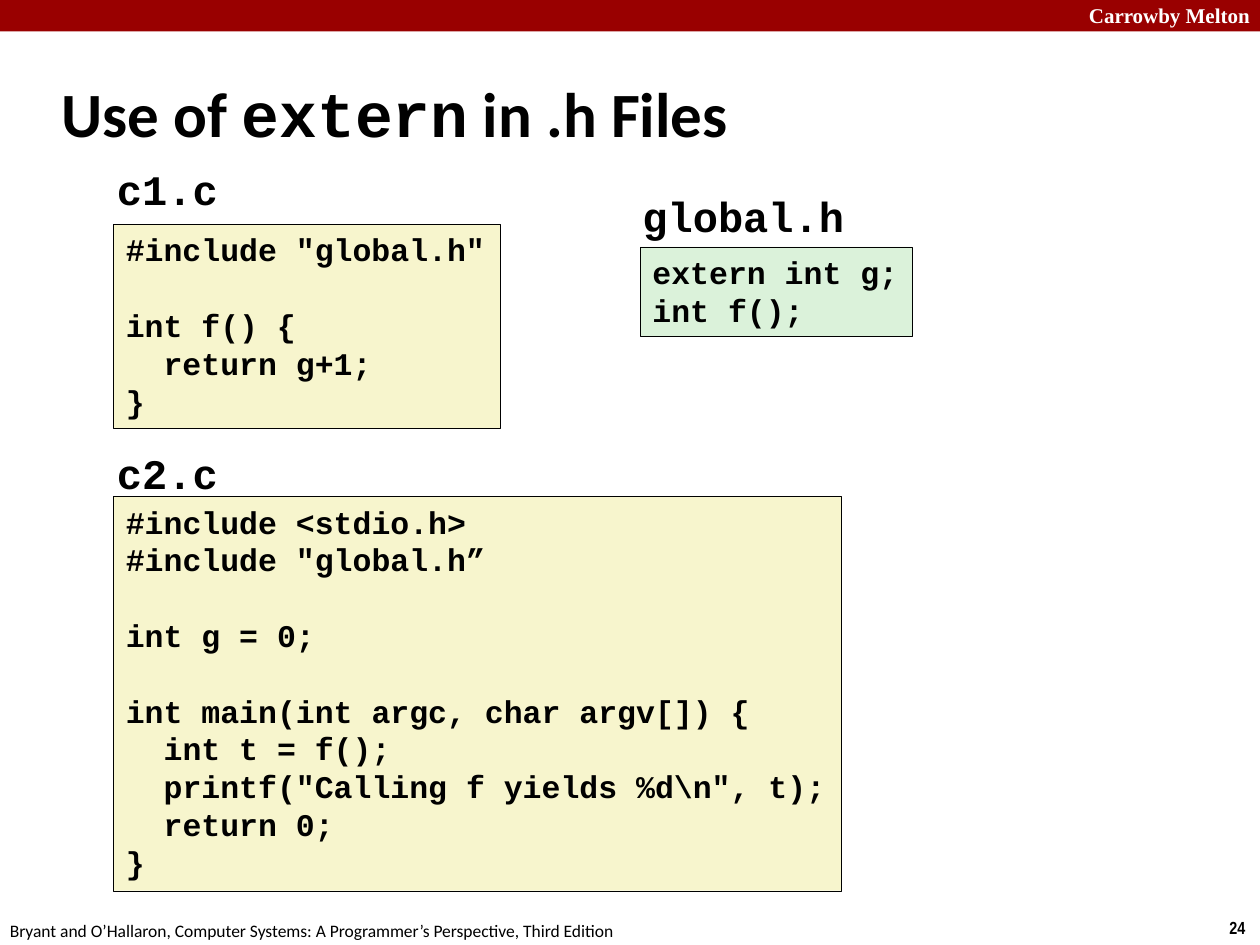
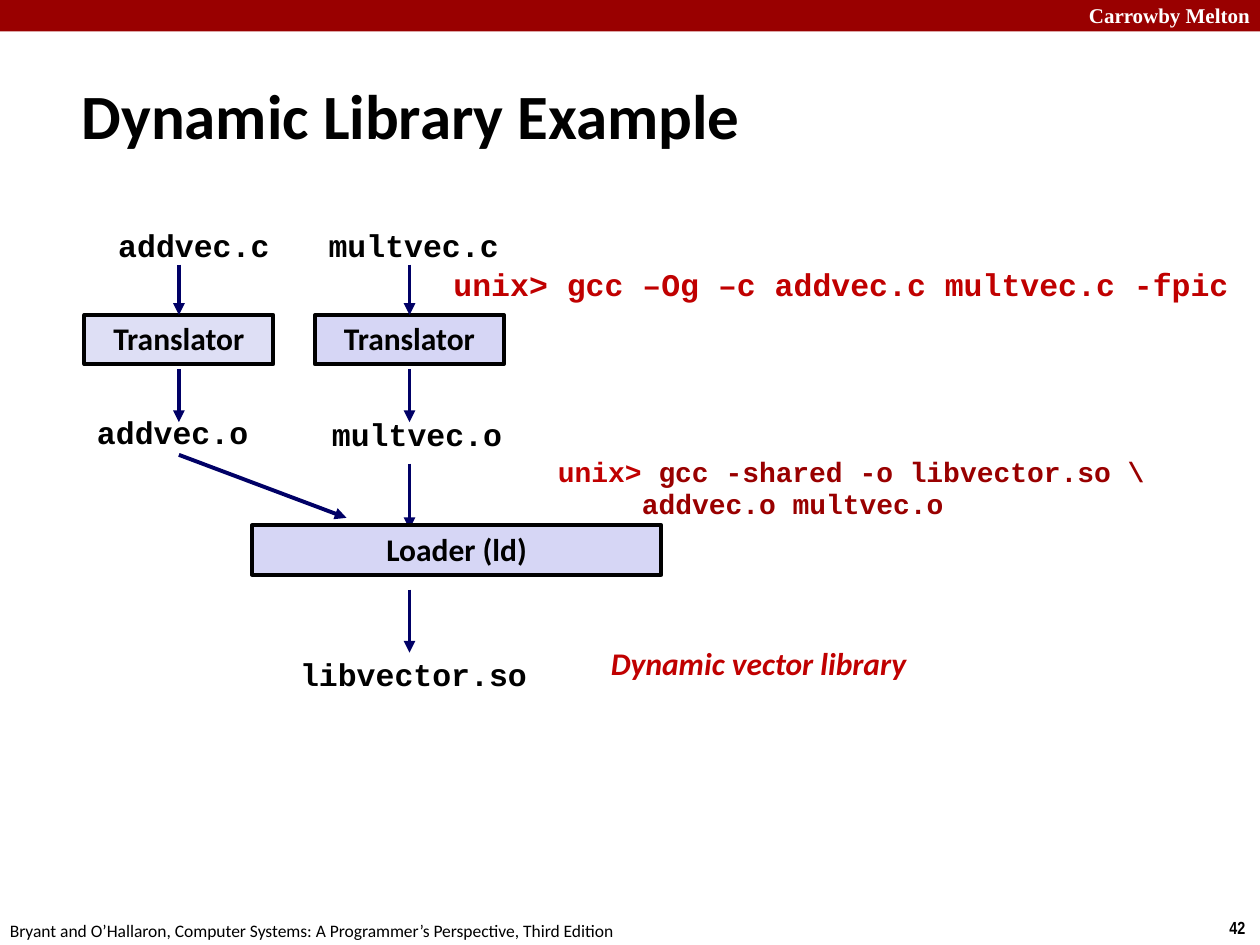
from dataclasses import dataclass
from typing import Optional

from lxml.etree import SubElement
from pptx import Presentation
from pptx.dml.color import RGBColor
from pptx.enum.shapes import MSO_CONNECTOR, MSO_SHAPE
from pptx.enum.text import MSO_ANCHOR, PP_ALIGN
from pptx.oxml.ns import qn
from pptx.shapes.autoshape import Shape
from pptx.shapes.connector import Connector
from pptx.slide import Slide
from pptx.util import Inches, Pt

BLACK, WHITE = "000000", "FFFFFF"
BAND_RED, COMMAND_RED, ARROW_BLUE = "990000", "C00000", "000066"
SOURCE_YELLOW, HEADER_GREEN = "F7F5CD", "DBF2DA"
TOOL_BLUE, PALE_TOOL_BLUE = "D6D6F5", "DEDFF5"

BODY, CODE = "Calibri", "Courier New"
CODE_CHARACTER_WIDTH = 0.6  # share of the font size
CODE_LINE_HEIGHT = 1.2
FILE_SPACING, TOOL_SPACING = 0.94, 0.98
TOOL_HEIGHT = 0.39


@dataclass(frozen=True)
class Box:
    left: float
    top: float
    width: float
    height: float


@dataclass(frozen=True)
class Style:
    size: float = 18
    font: str = CODE
    color: str = BLACK
    bold: bool = True
    italic: bool = False
    align: PP_ALIGN = PP_ALIGN.LEFT
    spacing: float = 1.0
    wrap: bool = False
    anchor: MSO_ANCHOR = MSO_ANCHOR.TOP


@dataclass(frozen=True)
class Span:
    text: str
    font: Optional[str] = None
    color: Optional[str] = None


@dataclass(frozen=True)
class Listing:
    name: str
    name_box: Box
    code_box: Box
    fill: str
    code: str


@dataclass(frozen=True)
class Pipeline:
    """One source file on its way through the translator."""
    center: float
    fill: str
    source: str
    source_box: Box
    target: str
    target_box: Box


BAND_NAME = Style(12, "Times New Roman", WHITE, align=PP_ALIGN.RIGHT)
TITLE = Style(36, BODY, wrap=True, anchor=MSO_ANCHOR.MIDDLE)
FILE_NAME = Style(24)
CODE_TEXT = Style()
SOURCE_FILE = Style(spacing=FILE_SPACING)
OBJECT_FILE = Style(align=PP_ALIGN.CENTER, spacing=FILE_SPACING)
LIBRARY_FILE = Style(align=PP_ALIGN.RIGHT, spacing=FILE_SPACING)
TOOL = Style(font=BODY, align=PP_ALIGN.CENTER, spacing=TOOL_SPACING, wrap=True)
COMMAND = Style(color=COMMAND_RED, spacing=FILE_SPACING, wrap=True)
LINK_COMMAND = Style(16, color=COMMAND_RED, spacing=FILE_SPACING)
REMARK = Style(font=BODY, color=COMMAND_RED, italic=True, spacing=TOOL_SPACING, wrap=True)

LISTINGS = [
    Listing("c1.c", Box(0.83, 1.25, 1.01, 0.5), Box(0.9, 1.78, 3.07, 1.62), SOURCE_YELLOW,
            """#include "global.h"

int f() {
  return g+1;
}"""),
    Listing("global.h", Box(5, 1.46, 1.81, 0.5), Box(5.08, 1.96, 2.16, 0.71), HEADER_GREEN,
            """extern int g;
int f();"""),
    Listing("c2.c", Box(0.83, 3.5, 1.01, 0.5), Box(0.9, 3.94, 5.78, 3.13), SOURCE_YELLOW,
            r"""#include <stdio.h>
#include "global.h”

int g = 0;

int main(int argc, char argv[]) {
  int t = f();
  printf("Calling f yields %d\n", t);
  return 0;
}"""),
]

PIPELINES = [
    Pipeline(1.42, PALE_TOOL_BLUE, "addvec.c", Box(0.84, 1.77, 1.4, 0.39),
             "addvec.o", Box(0.67, 3.25, 1.4, 0.39)),
    Pipeline(3.25, TOOL_BLUE, "multvec.c", Box(2.51, 1.77, 1.56, 0.39),
             "multvec.o", Box(2.53, 3.27, 1.56, 0.39)),
]


def rgb(value: str) -> RGBColor:
    return RGBColor.from_string(value)


def place(box: Box) -> list[int]:
    return [Inches(length) for length in (box.left, box.top, box.width, box.height)]


def write(shape: Shape, lines: list[list[Span]], style: Style) -> None:
    """Write lines; leading spaces become an indent, an empty line a gap before the next."""
    frame = shape.text_frame
    frame.word_wrap = style.wrap
    frame.vertical_anchor = style.anchor
    paragraph = frame.paragraphs[0]
    gap, started = 0, False
    for spans in lines:
        first = spans[0].text
        if not first:
            gap += style.size * CODE_LINE_HEIGHT
            continue
        if started:
            paragraph = frame.add_paragraph()
        started = True
        layout = {"alignment": style.align, "line_spacing": style.spacing, "space_before": Pt(gap)}
        for name, value in layout.items():
            setattr(paragraph, name, value)
        gap = 0
        depth = len(first) - len(first.lstrip()) if len(spans) == 1 else 0
        if depth:
            indent = Pt(depth * CODE_CHARACTER_WIDTH * style.size)
            paragraph._p.get_or_add_pPr().set("marL", str(indent))
        for span in spans:
            run = paragraph.add_run()
            run.text = span.text[depth:]
            font = {"size": Pt(style.size), "name": span.font or style.font,
                    "bold": style.bold, "italic": style.italic}
            for name, value in font.items():
                setattr(run.font, name, value)
            run.font.color.rgb = rgb(span.color or style.color)


def plain(text: str) -> list[list[Span]]:
    return [[Span(line)] for line in text.split("\n")]


def add_text(slide: Slide, box: Box, lines: list[list[Span]], style: Style) -> None:
    write(slide.shapes.add_textbox(*place(box)), lines, style)


def add_rectangle(slide: Slide, box: Box, fill: str, line_width: float = 0) -> Shape:
    shape = slide.shapes.add_shape(MSO_SHAPE.RECTANGLE, *place(box))
    shape.shadow.inherit = False
    shape.fill.solid()
    shape.fill.fore_color.rgb = rgb(fill)
    if line_width:
        shape.line.color.rgb = rgb(BLACK)
        shape.line.width = Pt(line_width)
    else:
        shape.line.fill.background()
    return shape


def add_tool(slide: Slide, box: Box, name: str, fill: str) -> Shape:
    shape = add_rectangle(slide, box, fill, 2.25)
    write(shape, plain(name), TOOL)
    return shape


def add_arrow(slide: Slide, start: tuple[float, float], end: tuple[float, float]) -> Connector:
    arrow = slide.shapes.add_connector(
        MSO_CONNECTOR.STRAIGHT, *(Inches(length) for length in (*start, *end)))
    arrow.line.color.rgb = rgb(ARROW_BLUE)
    arrow.line.width = Pt(2.25)
    SubElement(arrow.line._get_or_add_ln(), qn("a:tailEnd"), type="triangle")
    SubElement(arrow._element.spPr, qn("a:effectLst"))
    return arrow


def add_course_slide(presentation: Presentation, number: int, title: list[Span],
                     title_box: Box) -> Slide:
    """Add a slide with the band, footers and title common to the course."""
    slide = presentation.slides.add_slide(presentation.slide_layouts[6])
    add_rectangle(slide, Box(0, 0, 10, 0.25), BAND_RED)
    add_text(slide, Box(8.42, -0.03, 1.6, 0.3), plain("Carrowby Melton"), BAND_NAME)
    add_text(slide, Box(9.66, 7.23, 0.34, 0.27), plain(str(number)), Style(10, "Arial Narrow"))
    add_text(slide, Box(-0.02, 7.25, 5.08, 0.27),
             plain("Bryant and O’Hallaron, Computer Systems: "
                   "A Programmer’s Perspective, Third Edition"),
             Style(10, BODY, bold=False))
    add_text(slide, title_box, [title], TITLE)
    return slide


def add_extern_slide(presentation: Presentation) -> None:
    title = [Span("Use of "), Span("extern", CODE), Span(" in .h Files")]
    slide = add_course_slide(presentation, 24, title, Box(0.39, 0.48, 8.3, 0.83))
    for listing in LISTINGS:
        code_shape = add_rectangle(slide, listing.code_box, listing.fill, 0.25)
        write(code_shape, plain(listing.code), CODE_TEXT)
        add_text(slide, listing.name_box, plain(listing.name), FILE_NAME)


def add_library_slide(presentation: Presentation) -> None:
    slide = add_course_slide(presentation, 42, [Span("Dynamic Library Example")],
                             Box(0.55, 0.48, 9.53, 0.86))
    for pipeline in PIPELINES:
        center = pipeline.center
        translator = add_tool(slide, Box(center - 0.75, 2.5, 1.5, TOOL_HEIGHT),
                              "Translator", pipeline.fill)
        add_text(slide, pipeline.source_box, plain(pipeline.source), SOURCE_FILE)
        add_text(slide, pipeline.target_box, plain(pipeline.target), OBJECT_FILE)
        add_arrow(slide, (center, 2.1), (center, 2.5)).end_connect(translator, 0)
        add_arrow(slide, (center, 2.93), (center, 3.35))

    left_center, right_center = (pipeline.center for pipeline in PIPELINES)
    add_arrow(slide, (right_center, 3.68), (right_center, 4.2))
    add_tool(slide, Box(2, 4.17, 3.25, TOOL_HEIGHT), "Loader (ld)", TOOL_BLUE)
    add_arrow(slide, (left_center, 3.61), (2.75, 4.11))
    add_arrow(slide, (right_center, 4.68), (right_center, 5.18))
    add_text(slide, Box(2.27, 5.17, 2.01, 0.39), plain("libvector.so"), LIBRARY_FILE)

    add_text(slide, Box(3.5, 2.08, 6.42, 0.39),
             plain("unix> gcc –Og –c addvec.c multvec.c -fpic"), COMMAND)
    link_command = [
        [Span("unix> "), Span("gcc -shared -o libvector.so \\", color=BAND_RED)],
        [Span("     addvec.o multvec.o", color=BAND_RED)],
    ]
    add_text(slide, Box(4.33, 3.58, 4.92, 0.61), link_command, LINK_COMMAND)
    add_text(slide, Box(4.75, 5.08, 3.25, 0.4), plain("Dynamic vector library"), REMARK)


def main() -> None:
    presentation = Presentation()
    presentation.slide_width = Inches(10)
    presentation.slide_height = Inches(7.5)
    add_extern_slide(presentation)
    add_library_slide(presentation)
    presentation.save("out.pptx")


if __name__ == "__main__":
    main()
